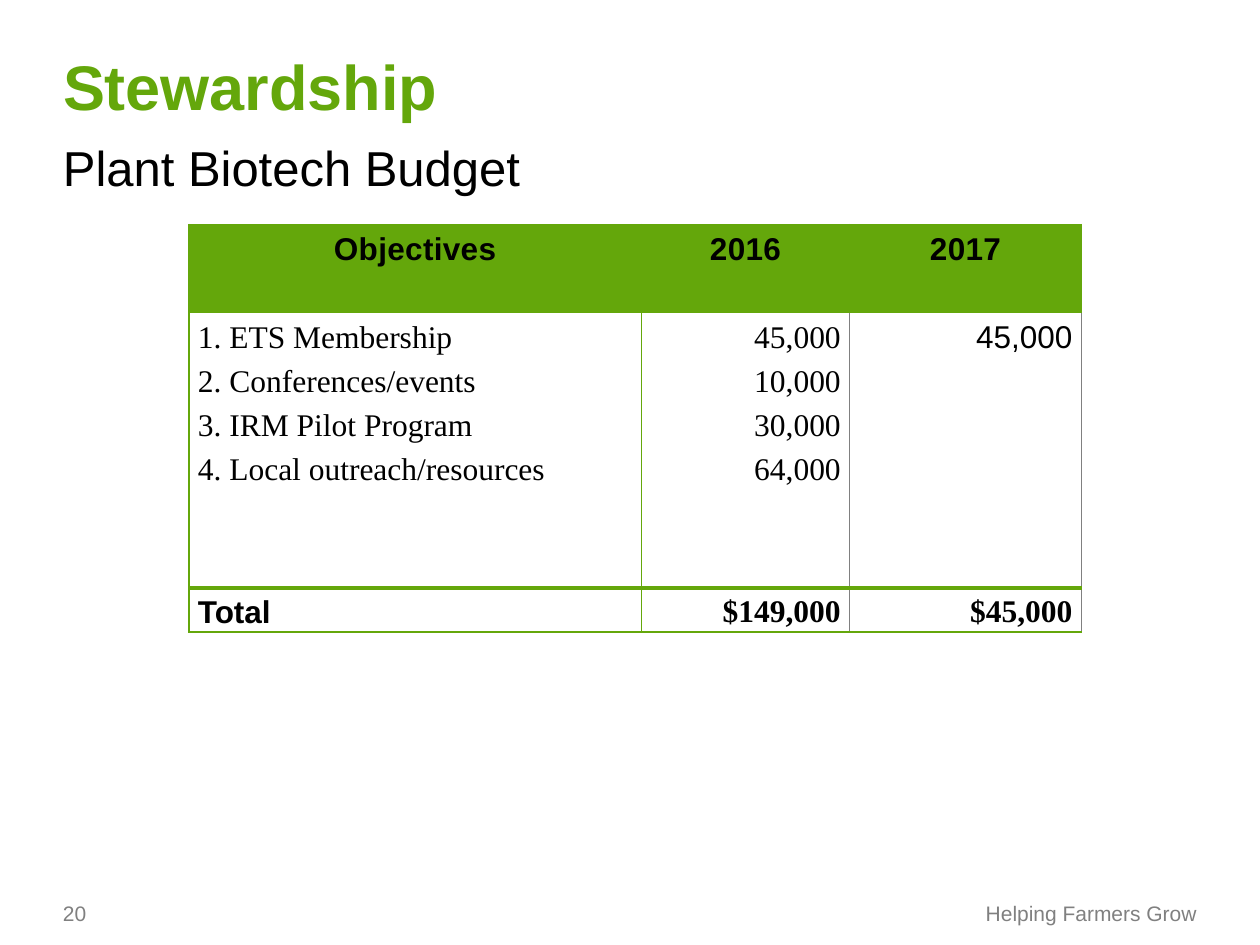
from dataclasses import dataclass

from lxml import etree
from pptx import Presentation
from pptx import util as u
from pptx.dml.color import RGBColor
from pptx.enum import text
from pptx.oxml import ns


@dataclass(frozen=True)
class Theme:
    """Colours, fonts and type sizes of the page."""
    green: str = "64A70B"
    black: str = "000000"
    grey: str = "808080"
    sans: str = "Arial"
    serif: str = "Times New Roman"
    title: int = 36
    subtitle: int = 28
    body: int = 18
    footer: int = 12
    thin: float = 0.5
    rule: float = 1
    heavy: float = 2.25


THEME = Theme()
LEFT, CENTER, RIGHT = text.PP_ALIGN.LEFT, text.PP_ALIGN.CENTER, text.PP_ALIGN.RIGHT
PLAIN_TABLE = "{2D5ABB26-0587-4C30-8999-92F81FD0307C}"
COLUMNS = (9.12, 4.2, 4.67)
ROWS = (1.78, 0.89, 0.89, 0.89, 1.09, 1.78, 0.89)
BUDGET = (
    ("Objectives", "2016", "2017"),
    ("1. ETS Membership", "45,000", "45,000"),
    ("2. Conferences/events", "10,000", ""),
    ("3. IRM Pilot Program", "30,000", ""),
    ("4. Local outreach/resources", "64,000", ""),
    ("", "", ""),
    ("Total", "$149,000", "$45,000"),
)


def set_values(target, values):
    """Set each attribute of the target from a dict."""
    for name, value in values.items():
        setattr(target, name, value)


def write(para, words, size, color, font=THEME.sans, bold=False, align=LEFT):
    """Write one formatted span in a paragraph."""
    para.alignment = align
    span = para.add_run()
    span.text = words
    set_values(span.font, {"name": font, "size": u.Pt(size), "bold": bold})
    span.font.color.rgb = RGBColor.from_string(color)
    return span


def fill_box(shape, box, words, size, color, **style):
    """Place a text shape in its box and write its line at the bottom."""
    set_values(shape, dict(zip(("left", "top", "width", "height"), map(u.Cm, box))))
    frame = shape.text_frame
    set_values(frame, {
        "margin_left": 0, "margin_right": 0, "margin_top": 0, "margin_bottom": 0,
        "word_wrap": True, "auto_size": text.MSO_AUTO_SIZE.NONE,
        "vertical_anchor": text.MSO_ANCHOR.BOTTOM,
    })
    para = frame.paragraphs[0]
    set_values(para, {"space_before": u.Pt(0), "line_spacing": 1.0})
    write(para, words, size, color, **style)


def add_line(page, box, words, size, color, **style):
    """Add a one-line text box."""
    fill_box(page.shapes.add_textbox(0, 0, 0, 0), box, words, size, color, **style)


def add_heading(page, box):
    """Put the title and subtitle in the heading region."""
    left, top, width = box
    fill_box(page.shapes.title, (left, top, 15.88, 1.55), "Stewardship",
             THEME.title, THEME.green, bold=True)
    add_line(page, (left, top + 2, width, 1.02), "Plant Biotech Budget",
             THEME.subtitle, THEME.black)


def add_footer(page, box):
    """Put the page number and tagline at the ends of the footer."""
    left, top, width, height = box
    number, tagline = 2.97, 4.8
    add_line(page, (left, top, number, height), "20", THEME.footer, THEME.grey)
    add_line(page, (left + width - tagline, top, tagline, height),
             "Helping Farmers Grow", THEME.footer, THEME.grey, align=RIGHT)


def set_borders(cell, borders):
    """Draw the sides of a cell, each given as a colour and a width."""
    properties = cell._tc.get_or_add_tcPr()
    for side in "LRTB":
        if side in borders:
            color, width = borders[side]
            line = etree.SubElement(properties, ns.qn(f"a:ln{side}"), w=str(u.Pt(width)))
            solid = etree.SubElement(line, ns.qn("a:solidFill"))
            etree.SubElement(solid, ns.qn("a:srgbClr"), val=color)


def cell_borders(row, column):
    """Choose the border colours and widths for a place in the table."""
    last = len(ROWS) - 1
    green, grey = (THEME.green, THEME.rule), (THEME.grey, THEME.thin)
    heavy = (THEME.green, THEME.heavy)
    borders = {"L": grey if row and column == 2 else green,
               "R": grey if row and column > 0 else green}
    if row == 0:
        borders["T"] = green
    elif row == last - 1:
        borders["B"] = heavy
    elif row == last:
        borders.update(T=heavy, B=green)
    return borders


def format_cell(cell, row, column, words):
    """Style a budget cell and write its entry."""
    header, total = row == 0, row == len(ROWS) - 1
    set_values(cell, {"margin_left": u.Cm(0.18), "margin_right": u.Cm(0.18),
                      "margin_top": 0, "margin_bottom": 0})
    set_borders(cell, cell_borders(row, column))
    if header:
        cell.fill.solid()
        cell.fill.fore_color.rgb = RGBColor.from_string(THEME.green)
    else:
        cell.fill.background()
    if not words:
        return
    para = cell.text_frame.paragraphs[0]
    para.line_spacing = 1.2
    sans = header or (total and column == 0) or (not total and column == 2)
    align = CENTER if header else RIGHT if column else LEFT
    span = write(para, words, THEME.body, THEME.black,
                 font=THEME.sans if sans else THEME.serif,
                 bold=header or total, align=align)
    if header:
        span.font._element.set("spc", "20")


def add_budget(page, box):
    """Add the budget table at the given corner."""
    left, top = map(u.Cm, box)
    frame = page.shapes.add_table(len(ROWS), len(COLUMNS), left, top,
                                  u.Cm(sum(COLUMNS)), u.Cm(sum(ROWS)))
    table = frame.table
    set_values(table, {"first_row": False, "horz_banding": False})
    table._tbl.tblPr.find(ns.qn("a:tableStyleId")).text = PLAIN_TABLE
    for column, width in zip(table.columns, COLUMNS):
        column.width = u.Cm(width)
    for index, height in enumerate(ROWS):
        table.rows[index].height = u.Cm(height)
        for place, words in enumerate(BUDGET[index]):
            format_cell(table.cell(index, place), index, place, words)


def main():
    """Build and save the budget page."""
    deck = Presentation()
    set_values(deck, {"slide_width": u.Cm(25.4), "slide_height": u.Cm(19.05)})
    page = deck.slides.add_slide(deck.slide_layouts[5])
    add_heading(page, (1.27, 0.94, 22.86))
    add_budget(page, (3.81, 4.53))
    add_footer(page, (1.27, 18.14, 22.86, 0.53))
    deck.save("out.pptx")


if __name__ == "__main__":
    main()
